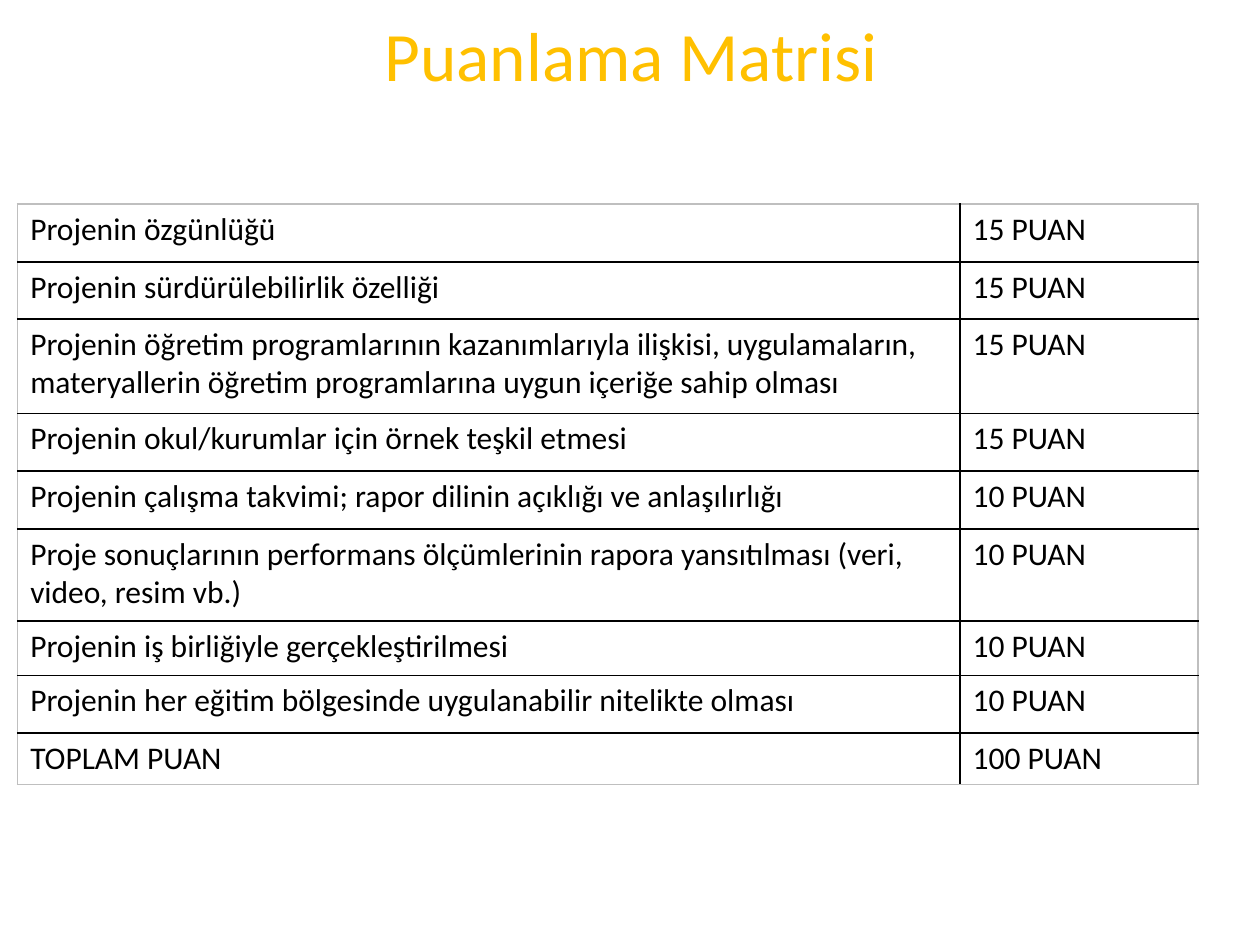
import dataclasses

import lxml.etree
import pptx
import pptx.dml.color
import pptx.enum.text
import pptx.oxml.ns
import pptx.util

Inches = pptx.util.Inches


@dataclasses.dataclass(frozen=True)
class Theme:
    font: str = "Calibri"
    title_color: str = "FFC000"
    text_color: str = "000000"
    inner_line: str = "000000"
    outer_line: str = "BFBFBF"
    title_size: float = 39.6
    text_size: float = 18
    line_width: float = 1


class SlideBuilder:
    def __init__(self, page, theme):
        self.page = page
        self.theme = theme

    def add_span(self, frame, text, size, color):
        span = frame.paragraphs[0].add_run()
        span.text = text
        span.font.name = self.theme.font
        span.font.size = pptx.util.Pt(size)
        span.font.color.rgb = pptx.dml.color.RGBColor.from_string(color)

    def title(self, text, left, top, width, height):
        box = self.page.shapes.title
        box.left, box.top = Inches(left), Inches(top)
        box.width, box.height = Inches(width), Inches(height)
        frame = box.text_frame
        frame.vertical_anchor = pptx.enum.text.MSO_ANCHOR.MIDDLE
        frame.paragraphs[0].alignment = pptx.enum.text.PP_ALIGN.CENTER
        self.add_span(frame, text, self.theme.title_size, self.theme.title_color)

    def borders(self, cell, outer_sides):
        name = pptx.oxml.ns.qn
        properties = cell._tc.get_or_add_tcPr()
        for index, (side, is_outer) in enumerate(outer_sides.items()):
            line = lxml.etree.Element(name(f"a:ln{side}"))
            line.set("w", str(pptx.util.Pt(self.theme.line_width)))
            fill = lxml.etree.SubElement(line, name("a:solidFill"))
            color = lxml.etree.SubElement(fill, name("a:srgbClr"))
            color.set("val", self.theme.outer_line if is_outer else self.theme.inner_line)
            properties.insert(index, line)

    def table(self, rows, left, top, widths, heights):
        table = self.page.shapes.add_table(
            len(rows), len(widths), Inches(left), Inches(top),
            Inches(sum(widths)), Inches(sum(heights)),
        ).table
        table.first_row = False
        table.horz_banding = False
        for column, width in zip(table.columns, widths):
            column.width = Inches(width)
        for row, height in zip(table.rows, heights):
            row.height = Inches(height)
        for row_index, values in enumerate(rows):
            for column_index, text in enumerate(values):
                cell = table.cell(row_index, column_index)
                cell.fill.background()
                self.add_span(cell.text_frame, text, self.theme.text_size, self.theme.text_color)
                self.borders(cell, {
                    "L": column_index == 0,
                    "R": column_index == len(widths) - 1,
                    "T": row_index == 0,
                    "B": row_index == len(rows) - 1,
                })


CRITERIA = [
    ("Projenin özgünlüğü", 15, 0.46),
    ("Projenin sürdürülebilirlik özelliği", 15, 0.45),
    ("Projenin öğretim programlarının kazanımlarıyla ilişkisi, uygulamaların, "
     "materyallerin öğretim programlarına uygun içeriğe sahip olması", 15, 0.75),
    ("Projenin okul/kurumlar için örnek teşkil etmesi", 15, 0.46),
    ("Projenin çalışma takvimi; rapor dilinin açıklığı ve anlaşılırlığı", 10, 0.46),
    ("Proje sonuçlarının performans ölçümlerinin rapora yansıtılması "
     "(veri, video, resim vb.)", 10, 0.73),
    ("Projenin iş birliğiyle gerçekleştirilmesi", 10, 0.43),
    ("Projenin her eğitim bölgesinde uygulanabilir nitelikte olması", 10, 0.46),
    ("TOPLAM PUAN", 100, 0.4),
]


def main():
    deck = pptx.Presentation()
    deck.slide_width, deck.slide_height = Inches(10), Inches(7.5)
    page = deck.slides.add_slide(deck.slide_layouts[5])
    builder = SlideBuilder(page, Theme())
    builder.title("Puanlama Matrisi", 0.51, 0.03, 9, 0.79)
    builder.table(
        [(criterion, f"{points} PUAN") for criterion, points, _ in CRITERIA],
        0.14, 1.62, [7.48, 1.89], [height for _, _, height in CRITERIA],
    )
    deck.save("out.pptx")


if __name__ == "__main__":
    main()
